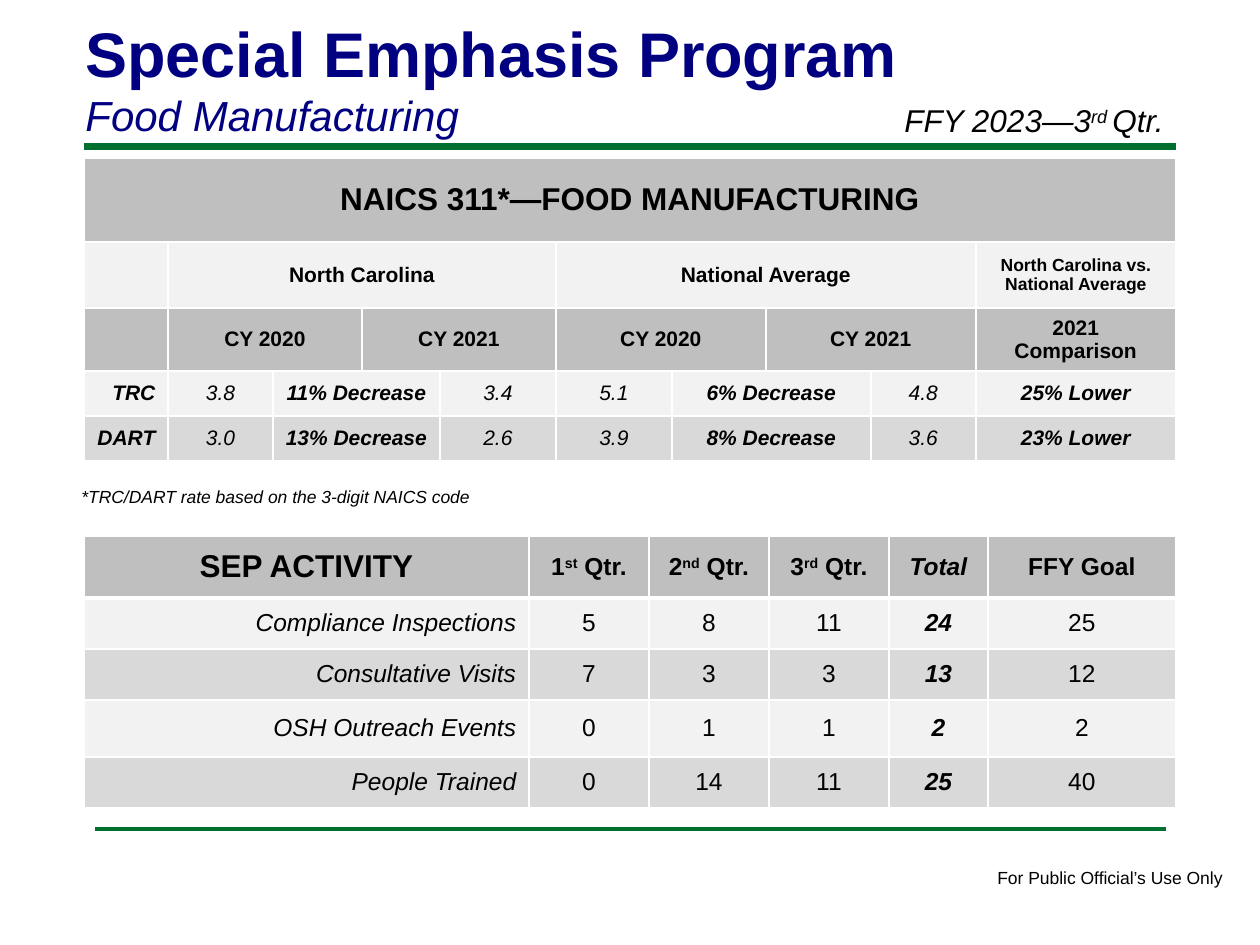
from lxml.etree import SubElement
from pptx import Presentation
from pptx.dml.color import RGBColor as RGB
from pptx.enum.shapes import MSO_CONNECTOR as Connector
from pptx.enum.text import MSO_ANCHOR as Anchor, MSO_AUTO_SIZE as AutoSize, PP_ALIGN as Align
from pptx.oxml.ns import qn
from pptx.util import Emu, Pt

NAVY = RGB(0x00, 0x00, 0x80)
GREEN = RGB(0x00, 0x70, 0x30)
BLACK = RGB(0x00, 0x00, 0x00)
WHITE = RGB(0xFF, 0xFF, 0xFF)
HEADER_GREY = RGB(0xBF, 0xBF, 0xBF)
LIGHT_GREY = RGB(0xF2, 0xF2, 0xF2)
MID_GREY = RGB(0xD9, 0xD9, 0xD9)
EDGES = ("a:lnL", "a:lnR", "a:lnT", "a:lnB")


def px(length):
    return Emu(round(length * 914400 / 126))


class SlideBuilder:
    font_name = "Arial"

    def __init__(self, slide):
        self.slide = slide

    def add_runs(self, paragraph, text, size, color=BLACK, bold=False, italic=False):
        for part, piece in enumerate(text.split("^")):
            run = paragraph.add_run()
            run.text = piece
            font = run.font
            font.name, font.size = self.font_name, Pt(size)
            font.bold, font.italic = bold, italic
            font.color.rgb = color
            if part % 2:
                run._r.get_or_add_rPr().set("baseline", "30000")

    def rule(self, left, right, y, weight):
        line = self.slide.shapes.add_connector(
            Connector.STRAIGHT, px(left), px(y), px(right), px(y))
        line.line.color.rgb = GREEN
        line.line.width = Pt(weight)
        SubElement(line._element.spPr, qn("a:effectLst"))

    def text(self, left, top, width, height, lines, wrap=True):
        box = self.slide.shapes.add_textbox(px(left), px(top), px(width), px(height))
        frame = box.text_frame
        frame.word_wrap = wrap
        frame.auto_size = AutoSize.SHAPE_TO_FIT_TEXT
        for index, (words, style) in enumerate(lines):
            paragraph = frame.add_paragraph() if index else frame.paragraphs[0]
            self.add_runs(paragraph, words, **style)

    def table(self, left, top, widths, heights, fills, header_edge=1):
        table = self.slide.shapes.add_table(
            len(heights), len(widths), px(left), px(top),
            px(sum(widths)), px(sum(heights))).table
        for column, width in zip(table.columns, widths):
            column.width = px(width)
        for index, (row, height, fill) in enumerate(zip(table.rows, heights, fills)):
            row.height = px(height)
            for cell in row.cells:
                weights = [1, 1, header_edge if index == 1 else 1,
                           header_edge if index == 0 else 1]
                self.border(cell, weights)
                cell.fill.solid()
                cell.fill.fore_color.rgb = fill
        return table

    def border(self, cell, weights):
        properties = cell._tc.get_or_add_tcPr()
        for edge, weight in zip(EDGES, weights):
            line = SubElement(properties, qn(edge), w=str(Pt(weight)))
            paint = SubElement(line, qn("a:solidFill"))
            SubElement(paint, qn("a:srgbClr"), val=str(WHITE))

    def cell(self, table, row, column, text, size, span=1, align=Align.CENTER, **style):
        cell = table.cell(row, column)
        if span > 1:
            cell.merge(table.cell(row, column + span - 1))
        cell.vertical_anchor = Anchor.MIDDLE
        paragraph = cell.text_frame.paragraphs[0]
        paragraph.alignment = align
        self.add_runs(paragraph, text, size, **style)


def add_activity(builder):
    activity = builder.table(
        84, 536, [445, 120, 120, 120, 99, 188], [62, 51, 51, 57, 51],
        [HEADER_GREY, LIGHT_GREY, MID_GREY, LIGHT_GREY, MID_GREY], header_edge=3)
    headings = ["SEP ACTIVITY", "1^st^ Qtr.", "2^nd^ Qtr.", "3^rd^ Qtr.", "Total", "FFY Goal"]
    for column, heading in enumerate(headings):
        builder.cell(activity, 0, column, heading, 14 if column else 18,
                     bold=True, italic=heading == "Total")
    counts = [
        ("Compliance Inspections", 5, 8, 11, 24, 25),
        ("Consultative Visits", 7, 3, 3, 13, 12),
        ("OSH Outreach Events", 0, 1, 1, 2, 2),
        ("People Trained", 0, 14, 11, 25, 40),
    ]
    for row, values in enumerate(counts, 1):
        for column, value in enumerate(values):
            is_total = headings[column] == "Total"
            builder.cell(activity, row, column, str(value), 14,
                         align=Align.CENTER if column else Align.RIGHT,
                         bold=is_total, italic=is_total or column == 0)


def add_rates(builder):
    rates = builder.table(
        84, 158, [84, 105, 89, 78, 116, 116, 94, 105, 105, 200], [84, 66, 60, 45, 45],
        [HEADER_GREY, LIGHT_GREY, HEADER_GREY, LIGHT_GREY, MID_GREY])
    builder.cell(rates, 0, 0, "NAICS 311*—FOOD MANUFACTURING", 18, span=10, bold=True)
    for column, region in ((1, "North Carolina"), (5, "National Average")):
        builder.cell(rates, 1, column, region, 12, span=4, bold=True)
        for offset, year in ((0, "CY 2020"), (2, "CY 2021")):
            builder.cell(rates, 2, column + offset, year, 12, span=2, bold=True)
    builder.cell(rates, 1, 9, "North Carolina vs. National Average", 10, bold=True)
    builder.cell(rates, 2, 9, "2021 Comparison", 12, bold=True)
    measures = [
        ("TRC", "3.8", "11% Decrease", "3.4", "5.1", "6% Decrease", "4.8", "25% Lower"),
        ("DART", "3.0", "13% Decrease", "2.6", "3.9", "8% Decrease", "3.6", "23% Lower"),
    ]
    for row, values in enumerate(measures, 3):
        column = 0
        for value in values:
            span = 2 if "Decrease" in value else 1
            builder.cell(rates, row, column, value, 12, span=span,
                         align=Align.CENTER if column else Align.RIGHT,
                         bold="." not in value, italic=True)
            column += span


def main():
    deck = Presentation()
    deck.slide_width, deck.slide_height = px(1260), px(945)
    builder = SlideBuilder(deck.slides.add_slide(deck.slide_layouts[6]))
    builder.rule(84, 1176, 147, 4)
    builder.rule(95, 1166, 829, 2)
    builder.text(985, 861, 253, 34,
                 [("For Public Official’s Use Only", dict(size=10))], wrap=False)
    builder.text(73, 8, 1040, 140, [
        ("Special Emphasis Program", dict(size=36, color=NAVY, bold=True)),
        ("Food Manufacturing", dict(size=24, color=NAVY, italic=True)),
    ])
    builder.text(69, 480, 426, 34, [
        ("*TRC/DART rate based on the 3-digit NAICS code", dict(size=10, italic=True)),
    ], wrap=False)
    add_activity(builder)
    add_rates(builder)
    builder.text(892, 95, 315, 50, [("FFY 2023—3^rd ^Qtr.", dict(size=18, italic=True))])
    deck.save("out.pptx")


if __name__ == "__main__":
    main()
